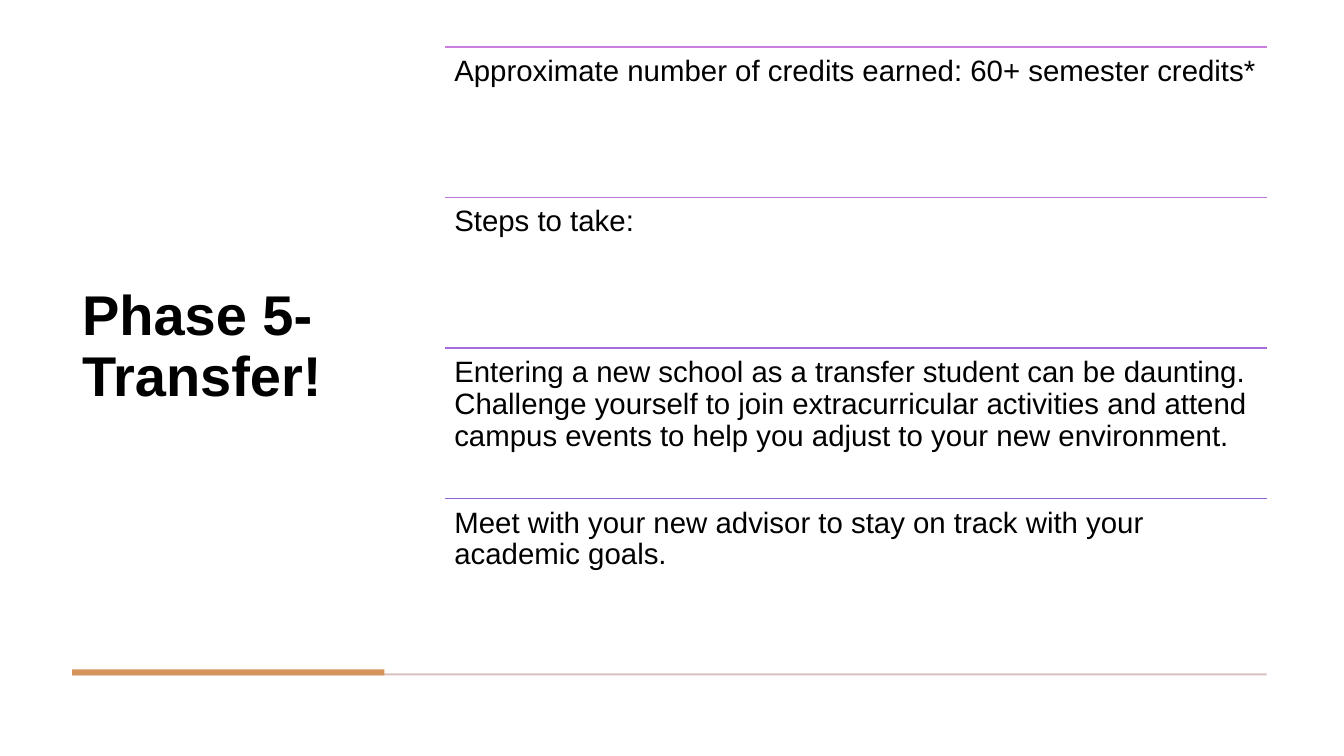
import pptx
import pptx.dml.color
import pptx.enum.shapes
import pptx.enum.text
import pptx.util
from lxml import etree

Cm = pptx.util.Cm
Pt = pptx.util.Pt
RGBColor = pptx.dml.color.RGBColor

BLACK = RGBColor(0x00, 0x00, 0x00)
WHITE = RGBColor(0xFF, 0xFF, 0xFF)
ORANGE = RGBColor(0xD4, 0x94, 0x5C)
ROSE = RGBColor(0xDB, 0xC1, 0xBD)
ORCHID = RGBColor(0xCB, 0x7F, 0xDD)
MAUVE = RGBColor(0xB9, 0x76, 0xDB)
PURPLE = RGBColor(0xA6, 0x6C, 0xD8)
VIOLET = RGBColor(0x90, 0x63, 0xD6)

MARGIN_LEFT = 1.82
CONTENT_TOP = 1.18
CONTENT_HEIGHT = 15.18
TITLE_WIDTH = 7.87
STEPS_LEFT = 11.22
STEPS_WIDTH = 20.7

STEPS = [
    ("Approximate number of credits earned: 60+ semester credits*", ORCHID),
    ("Steps to take:", MAUVE),
    ("Entering a new school as a transfer student can be daunting. "
     "Challenge yourself to join extracurricular activities and attend "
     "campus events to help you adjust to your new environment.", PURPLE),
    ("Meet with your new advisor to stay on track with your "
     "academic goals.", VIOLET),
]


class SlideBuilder:
    """Holds the text style and the slide; all lengths are in centimetres."""

    font_name = "Arial"
    line_spacing = 0.9

    def __init__(self, slide):
        self.slide = slide

    def background(self, color):
        fill = self.slide.background.fill
        fill.solid()
        fill.fore_color.rgb = color

    def text(self, content, left, top, width, height, size, bold=False,
             anchor=pptx.enum.text.MSO_ANCHOR.TOP, inset=0.23):
        shape = self.slide.shapes.add_textbox(
            Cm(left), Cm(top), Cm(width), Cm(height))
        frame = shape.text_frame
        frame.word_wrap = True
        frame.vertical_anchor = anchor
        frame.margin_left = frame.margin_right = Cm(inset)
        frame.margin_top = frame.margin_bottom = Cm(inset)
        frame.text = content
        paragraph = frame.paragraphs[0]
        paragraph.line_spacing = self.line_spacing
        font = paragraph.runs[0].font
        font.name = self.font_name
        font.size = Pt(size)
        font.bold = bold
        font.color.rgb = BLACK

    def bar(self, left, top, width, height, color):
        shape = self.slide.shapes.add_shape(
            pptx.enum.shapes.MSO_SHAPE.RECTANGLE,
            Cm(left), Cm(top), Cm(width), Cm(height))
        shape.shadow.inherit = False
        shape.fill.solid()
        shape.fill.fore_color.rgb = color
        shape.line.fill.background()

    def rule(self, left, top, width, color):
        """Draw a thin horizontal line."""
        connector = self.slide.shapes.add_connector(
            pptx.enum.shapes.MSO_CONNECTOR.STRAIGHT,
            Cm(left), Cm(top), Cm(left + width), Cm(top))
        connector.line.color.rgb = color
        connector.line.width = Pt(1)
        etree.SubElement(connector._element.spPr,
                         pptx.oxml.ns.qn("a:effectLst"))


def main():
    presentation = pptx.Presentation()
    presentation.slide_width = Cm(33.87)
    presentation.slide_height = Cm(19.05)
    slide = presentation.slides.add_slide(presentation.slide_layouts[6])
    builder = SlideBuilder(slide)

    builder.background(WHITE)
    builder.text("Phase 5- Transfer!", MARGIN_LEFT, CONTENT_TOP, TITLE_WIDTH,
                 CONTENT_HEIGHT, size=40, bold=True,
                 anchor=pptx.enum.text.MSO_ANCHOR.MIDDLE, inset=0.25)
    builder.bar(MARGIN_LEFT, 16.97, 30.1, 0.05, ROSE)
    builder.bar(MARGIN_LEFT, 16.87, TITLE_WIDTH, 0.15, ORANGE)

    step_height = CONTENT_HEIGHT / len(STEPS)
    for index, (content, color) in enumerate(STEPS):
        top = CONTENT_TOP + index * step_height
        builder.rule(STEPS_LEFT, top, STEPS_WIDTH, color)
        builder.text(content, STEPS_LEFT, top, STEPS_WIDTH, step_height,
                     size=21)

    presentation.save("out.pptx")


if __name__ == "__main__":
    main()
